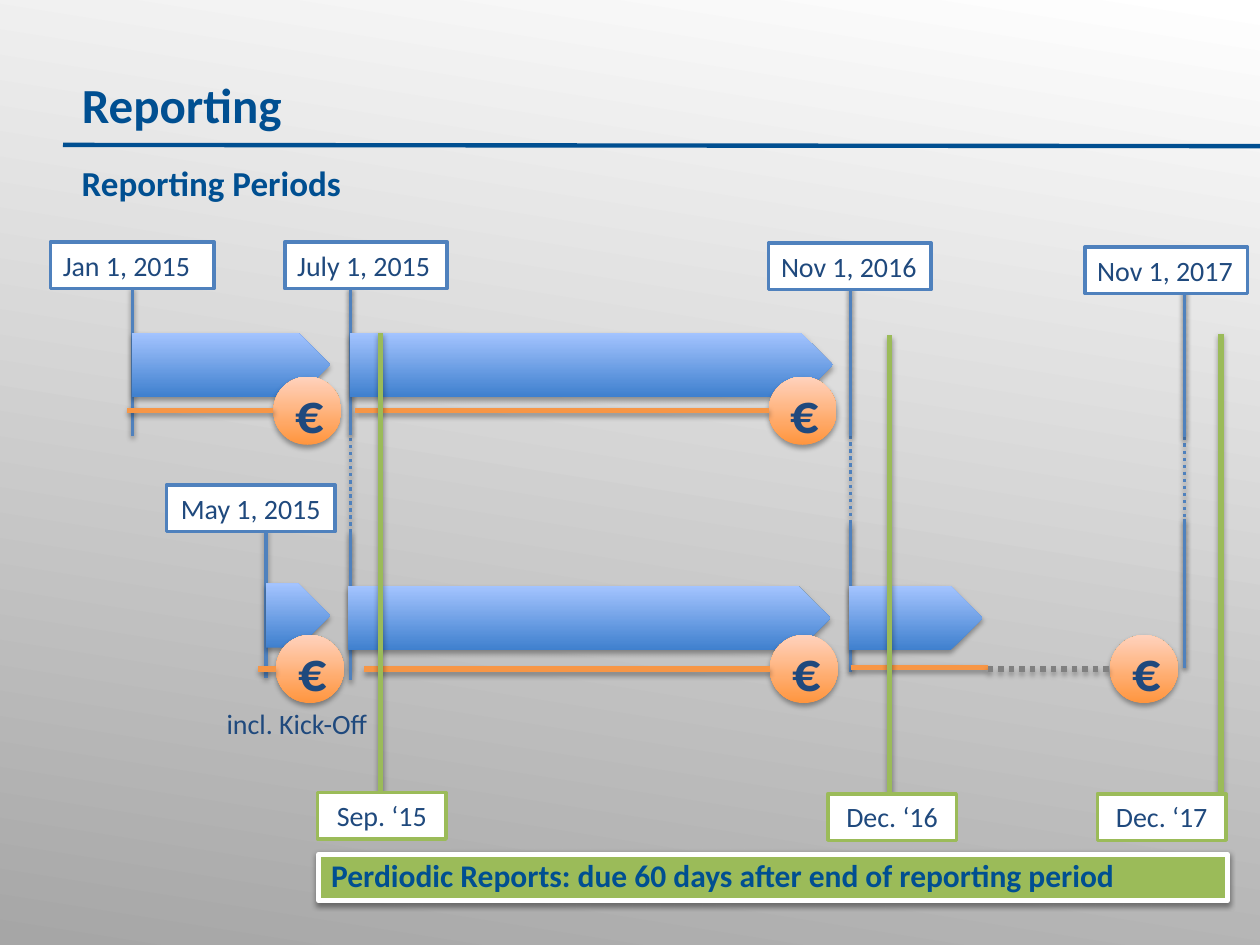
from lxml import etree
from pptx import Presentation
from pptx.dml.color import RGBColor
from pptx.enum import dml, shapes, text
from pptx.oxml import ns
from pptx.util import Inches, Pt

NAVY, TITLE_BLUE, BLUE = "1F497D", "004F91", "4F81BD"
GREEN, ORANGE, GREY, WHITE = "9BBB59", "F79646", "808080", "FFFFFF"
ARROW_GRADIENT = ("3F80CE", "A4C4FF")
COIN_GRADIENT = ("FF953E", "FFD2BD")
LEFT, CENTER = text.PP_ALIGN.LEFT, text.PP_ALIGN.CENTER
BOX_HEIGHT, ARROW_HEIGHT, COIN_SIZE, STEM = 0.37, 0.51, 0.54, 1.18

# x, top, bottom
DOTTED_STEMS = [(2.78, 2.3, 5.33), (6.75, 2.28, 5.31), (9.4, 2.29, 5.3)]
# x, top
SOLID_STEMS = [(2.78, 4.22), (2.78, 2.27), (6.75, 4.15), (6.75, 2.28),
               (1.05, 2.28), (2.11, 4.2), (9.4, 4.12), (9.4, 2.29)]
# left, top, width
ARROWS = [(1.05, 2.64, 1.57), (2.78, 2.64, 3.83), (2.76, 4.65, 3.83),
          (2.11, 4.63, 0.51), (6.74, 4.65, 1.06)]
# left, top
COINS = [(2.17, 2.99), (6.1, 2.99), (2.19, 5.04), (6.11, 5.04), (8.81, 5.04)]
# from x, to x, y
COST_LINES = [(1.01, 2.17, 3.26), (2.82, 6.1, 3.26), (2.05, 2.19, 5.31),
              (2.89, 6.11, 5.31), (6.75, 7.84, 5.3)]
# label, left, top, width, alignment
START_DATES = [("Jan 1, 2015", 0.4, 1.92, 1.3, LEFT),
               ("May 1, 2015", 1.32, 3.85, 1.34, CENTER),
               ("July 1, 2015", 2.26, 1.92, 1.29, LEFT),
               ("Nov 1, 2016", 6.1, 1.93, 1.29, LEFT),
               ("Nov 1, 2017", 8.61, 1.96, 1.29, LEFT)]
# label, box left, box top, line x, line top
REPORTS = [("Sep. ‘15", 2.52, 6.29, 3.02, 2.64),
           ("Dec. ‘16", 6.57, 6.3, 7.06, 2.66),
           ("Dec. ‘17", 8.71, 6.3, 9.69, 2.65)]


def rgb(value):
    return RGBColor.from_string(value)


def set_gradient(fill, colors, angle):
    """Fill with two stops; the angle runs counter-clockwise."""
    fill.gradient()
    fill.gradient_angle = angle
    for stop, color, position in zip(fill.gradient_stops, colors, (0, 1)):
        stop.color.rgb = rgb(color)
        stop.position = position


def add_shadow(item, alpha=35, distance=1.8):
    effects = etree.SubElement(item._element.spPr, ns.qn("a:effectLst"))
    shadow = etree.SubElement(effects, ns.qn("a:outerShdw"), blurRad=str(Pt(3.1)),
                              dist=str(Pt(distance)), dir="5400000", rotWithShape="0")
    color = etree.SubElement(shadow, ns.qn("a:srgbClr"), val="000000")
    etree.SubElement(color, ns.qn("a:alpha"), val=str(alpha * 1000))


def add_line(page, x1, y1, x2, y2, color, width, dotted=False, shadow=(35, 1.8)):
    line = page.shapes.add_connector(shapes.MSO_CONNECTOR.STRAIGHT,
                                     *map(Inches, (x1, y1, x2, y2)))
    line.line.color.rgb = rgb(color)
    line.line.width = Pt(width)
    if dotted:
        line.line.dash_style = dml.MSO_LINE.ROUND_DOT
    if shadow:
        add_shadow(line, *shadow)
    else:
        etree.SubElement(line._element.spPr, ns.qn("a:effectLst"))


def add_shape(page, kind, left, top, width, height):
    shape = page.shapes.add_shape(kind, *map(Inches, (left, top, width, height)))
    shape.line.fill.background()
    return shape


def write(box, words, size, color=NAVY, bold=False, align=LEFT,
          anchor=text.MSO_ANCHOR.TOP, heading=False):
    frame = box.text_frame
    frame.text = words
    frame.word_wrap = True
    frame.vertical_anchor = anchor
    para = frame.paragraphs[0]
    para.alignment = align
    if heading:
        para.line_spacing = 0.9
        para.space_after = Pt(12)
    font = para.font
    font.name, font.size, font.bold = "Calibri", Pt(size), bold
    font.color.rgb = rgb(color)


def add_box(page, left, top, width, fill, line, line_width):
    box = add_shape(page, shapes.MSO_SHAPE.RECTANGLE, left, top, width, BOX_HEIGHT)
    box.fill.solid()
    box.fill.fore_color.rgb = rgb(fill)
    box.line.color.rgb = rgb(line)
    box.line.width = Pt(line_width)
    return box


def add_label(page, words, left, top, width, color, align):
    box = add_box(page, left, top, width, WHITE, color, 2)
    box.shadow.inherit = False
    write(box, words, 16, align=align)


def add_headings(page):
    title = page.shapes.title
    title.left, title.top, title.width, title.height = map(Inches, (0.55, 0.59, 9.04, 0.53))
    title.text_frame.auto_size = text.MSO_AUTO_SIZE.NONE
    write(title, "Reporting", 28, TITLE_BLUE, bold=True, heading=True)
    subtitle = page.shapes.add_textbox(*map(Inches, (0.55, 1.27, 9.19, 0.4)))
    write(subtitle, "Reporting Periods", 20, TITLE_BLUE, bold=True, heading=True)


def add_timeline(page):
    stem_shadow = (38, 1.6)
    for x, top, bottom in DOTTED_STEMS:
        add_line(page, x, top, x, bottom, BLUE, 2, dotted=True, shadow=stem_shadow)
    for x, top in SOLID_STEMS:
        add_line(page, x, top, x, top + STEM, BLUE, 2, shadow=stem_shadow)
    for left, top, width in ARROWS:
        arrow = add_shape(page, shapes.MSO_SHAPE.PENTAGON, left, top, width, ARROW_HEIGHT)
        set_gradient(arrow.fill, ARROW_GRADIENT, 90)
        add_shadow(arrow)
    for left, top in COINS:
        coin = add_shape(page, shapes.MSO_SHAPE.OVAL, left, top, COIN_SIZE, COIN_SIZE)
        set_gradient(coin.fill, COIN_GRADIENT, 90)
        add_shadow(coin)
        write(coin, "€", 32, bold=True, align=CENTER, anchor=text.MSO_ANCHOR.MIDDLE)
    for start, end, y in COST_LINES:
        add_line(page, start, y, end, y, ORANGE, 3)
    add_line(page, 7.84, 5.31, 8.81, 5.31, GREY, 3, dotted=True)
    for words, left, top, width, align in START_DATES:
        add_label(page, words, left, top, width, BLUE, align)
    note = page.shapes.add_textbox(*map(Inches, (1.7, 5.56, 1.34, BOX_HEIGHT)))
    write(note, "incl. Kick-Off", 16)
    note.text_frame.word_wrap = False


def add_reports(page):
    banner = add_box(page, 2.53, 6.78, 7.21, GREEN, WHITE, 3)
    add_shadow(banner, 38, 1.6)
    write(banner, "Perdiodic Reports: due 60 days after end of reporting period",
          18, TITLE_BLUE, bold=True, heading=True)
    for words, left, top, x, line_top in REPORTS:
        add_line(page, x, top, x, line_top, GREEN, 3)
        add_label(page, words, left, top, 1.02, GREEN, CENTER)


def main():
    deck = Presentation()
    deck.slide_width, deck.slide_height = Inches(10), Inches(7.5)
    page = deck.slides.add_slide(deck.slide_layouts.get_by_name("Title Only"))
    set_gradient(page.background.fill, (WHITE, "A6A6A6"), 261)
    add_line(page, 0.5, 1.15, 10, 1.16, TITLE_BLUE, 2.5, shadow=None)
    add_headings(page)
    add_timeline(page)
    add_reports(page)
    deck.save("out.pptx")


if __name__ == "__main__":
    main()
